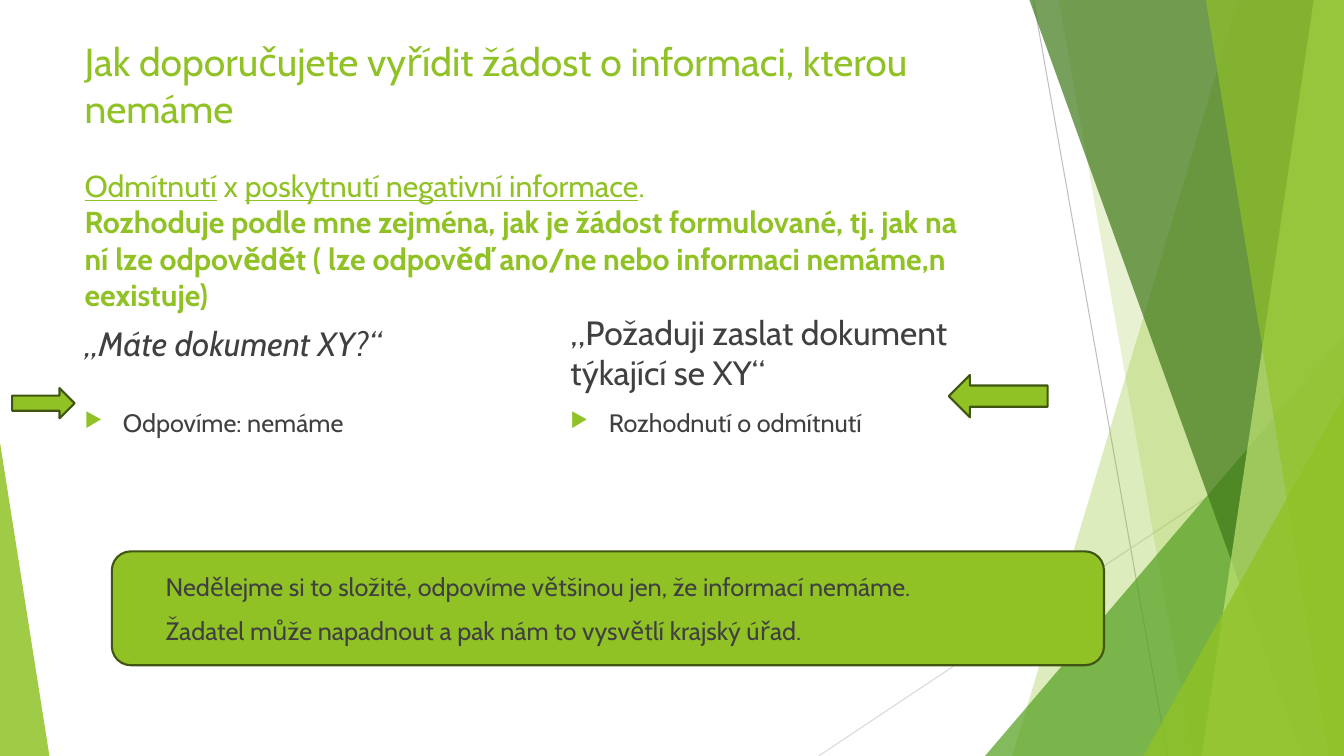
from dataclasses import dataclass
from typing import Any, Optional

import pptx
import pptx.dml.color
import pptx.enum.shapes
import pptx.enum.text
import pptx.oxml.ns
import pptx.util
from lxml import etree

Inches = pptx.util.Inches
Pt = pptx.util.Pt
MSO_SHAPE = pptx.enum.shapes.MSO_SHAPE
MSO_ANCHOR = pptx.enum.text.MSO_ANCHOR
PP_ALIGN = pptx.enum.text.PP_ALIGN
qn = pptx.oxml.ns.qn

WIDTH, HEIGHT = 13.33, 7.5
FONT = "Cabin"
GREEN, DARK_GREEN, GREY = "90C226", "3F5511", "404040"
INDENT = 0.38


@dataclass
class Ray:
    start: tuple[float, float]
    end: tuple[float, float]
    color: str


@dataclass
class Band:
    top_x: float
    bottom_x: float
    color: str
    alpha: int


@dataclass
class Wedge:
    left: float
    top: float
    width: float
    apex: float
    color: str
    alpha: int


@dataclass
class Run:
    text: str
    fmt: dict[str, Any]


@dataclass
class Para:
    runs: list[Run]
    before: float = 0
    indent: float = 0
    bullet: bool = False


@dataclass
class Box:
    left: float
    top: float
    width: float
    height: float
    paras: list[Para]
    anchor: Any = MSO_ANCHOR.TOP


@dataclass
class Panel:
    kind: Any
    left: float
    top: float
    width: float
    height: float
    paras: Optional[list[Para]] = None


def rgb(color: str) -> pptx.dml.color.RGBColor:
    return pptx.dml.color.RGBColor.from_string(color)


def paint(sp: Any, color: str, alpha: int = 100) -> None:
    sp.shadow.inherit = False
    sp.fill.solid()
    sp.fill.fore_color.rgb = rgb(color)
    if alpha < 100:
        clr = sp._element.spPr.find(qn("a:solidFill"))[0]
        etree.SubElement(clr, qn("a:alpha"), val=str(alpha * 1000))


def draw_ray(s: Any, ray: Ray) -> None:
    ends = [Inches(v) for v in ray.start + ray.end]
    c = s.shapes.add_connector(pptx.enum.shapes.MSO_CONNECTOR.STRAIGHT, *ends)
    c.line.color.rgb = rgb(ray.color)
    c.line.width = Pt(0.75)
    etree.SubElement(c._element.spPr, qn("a:effectLst"))


def draw_band(s: Any, band: Band) -> None:
    fb = s.shapes.build_freeform(Inches(band.top_x), 0)
    corners = [(WIDTH, 0), (WIDTH, HEIGHT), (band.bottom_x, HEIGHT)]
    fb.add_line_segments([(Inches(x), Inches(y)) for x, y in corners])
    sp = fb.convert_to_shape()
    paint(sp, band.color, band.alpha)
    sp.line.fill.background()


def draw_wedge(s: Any, wedge: Wedge) -> None:
    frame = (wedge.left, wedge.top, wedge.width, HEIGHT - wedge.top)
    sp = s.shapes.add_shape(MSO_SHAPE.ISOSCELES_TRIANGLE, *map(Inches, frame))
    sp.adjustments[0] = wedge.apex
    paint(sp, wedge.color, wedge.alpha)
    sp.line.fill.background()


def add_bullet(p: Any) -> None:
    pPr = p._p.get_or_add_pPr()
    color = etree.SubElement(pPr, qn("a:buClr"))
    etree.SubElement(color, qn("a:srgbClr"), val=GREEN)
    etree.SubElement(pPr, qn("a:buSzPct"), val="80000")
    etree.SubElement(pPr, qn("a:buChar"), char="▶")


def write(tf: Any, paras: list[Para], anchor: Any) -> None:
    tf.word_wrap = True
    tf.vertical_anchor = anchor
    for i, para in enumerate(paras):
        p = tf.add_paragraph() if i else tf.paragraphs[0]
        p.alignment = PP_ALIGN.LEFT
        if para.before:
            p.space_before = Pt(para.before)
        if para.indent:
            pPr = p._p.get_or_add_pPr()
            pPr.set("marL", str(Inches(para.indent)))
            pPr.set("indent", str(-Inches(para.indent) if para.bullet else 0))
        if para.bullet:
            add_bullet(p)
        for run in para.runs:
            r = p.add_run()
            r.text = run.text
            r.font.name = FONT
            for key, value in run.fmt.items():
                if key == "color":
                    r.font.color.rgb = rgb(value)
                else:
                    setattr(r.font, key, value)


def draw_box(s: Any, box: Box) -> None:
    frame = (box.left, box.top, box.width, box.height)
    sp = s.shapes.add_textbox(*map(Inches, frame))
    write(sp.text_frame, box.paras, box.anchor)


def draw_panel(s: Any, panel: Panel) -> None:
    frame = (panel.left, panel.top, panel.width, panel.height)
    sp = s.shapes.add_shape(panel.kind, *map(Inches, frame))
    paint(sp, GREEN)
    sp.line.color.rgb = rgb(DARK_GREEN)
    sp.line.width = Pt(1.5)
    if panel.paras:
        write(sp.text_frame, panel.paras, MSO_ANCHOR.MIDDLE)


HEADLINE = {"size": Pt(27.9), "color": GREEN}
LEAD = {"size": Pt(21.6), "color": GREEN}
UNDERLINED = {**LEAD, "underline": True}
STRONG = {**LEAD, "bold": True}
QUOTE = {"size": Pt(24), "color": GREY}
BODY = {"size": Pt(18), "color": GREY}

RAYS = [
    Ray((10.25, 0), (11.58, HEIGHT), "BFBFBF"),
    Ray((WIDTH, 4.03), (8.12, HEIGHT), "D9D9D9"),
]
FACETS = [
    Band(12.28, 10.04, GREEN, 30),
    Band(10.5, 11.83, GREEN, 20),
    Wedge(9.77, 3.33, 3.56, 1, "54A021", 72),
    Band(10.21, 12.91, "3F7819", 70),
    Band(13.03, 11.92, "C0E474", 70),
    Band(11.96, 13.18, GREEN, 65),
    Wedge(11.34, 3.93, 1.99, 1, GREEN, 80),
    Wedge(0, 4.39, 0.49, 0, GREEN, 85),
]
TITLE = [
    Para([Run("Jak doporučujete vyřídit žádost o informaci, kterou nemáme", HEADLINE)]),
    Para([Run("Odmítnutí", UNDERLINED), Run(" x ", LEAD),
          Run("poskytnutí negativní informace", UNDERLINED), Run(".", LEAD)], before=26),
    Para([Run("Rozhoduje podle mne zejména, jak je žádost formulované, tj. jak na ní lze "
              "odpovědět ( lze odpověď ano/ne nebo informaci nemáme,n eexistuje)", STRONG)]),
]
BOXES = [
    Box(0.74, 0.32, 9.12, 1.79, TITLE),
    Box(0.74, 2.36, 4.58, 1.29,
        [Para([Run("„Máte dokument XY?“", {**QUOTE, "italic": True})])], MSO_ANCHOR.BOTTOM),
    Box(5.56, 2.55, 4.58, 1.39,
        [Para([Run("„Požaduji zaslat dokument týkající se XY“", QUOTE)])], MSO_ANCHOR.BOTTOM),
] + [
    Box(left, 3.99, 4.58, 2.62, [Para([Run(answer, BODY)], indent=INDENT, bullet=True)])
    for left, answer in [(0.74, "Odpovíme: nemáme"), (5.56, "Rozhodnutí o odmítnutí")]
]
ADVICE = [
    Para([Run("Nedělejme si to složité, odpovíme většinou jen, že informací nemáme.", BODY)],
         indent=INDENT),
    Para([Run("Žadatel může napadnout a pak nám to vysvětlí krajský úřad.", BODY)],
         before=10, indent=INDENT),
]
PANELS = [
    Panel(MSO_SHAPE.ROUNDED_RECTANGLE, 1.11, 5.47, 9.84, 1.13, ADVICE),
    Panel(MSO_SHAPE.RIGHT_ARROW, 0.12, 3.85, 0.62, 0.3),
    Panel(MSO_SHAPE.LEFT_ARROW, 9.41, 3.72, 0.98, 0.42),
]


def main() -> None:
    prs = pptx.Presentation()
    prs.slide_width, prs.slide_height = Inches(WIDTH), Inches(HEIGHT)
    s = prs.slides.add_slide(prs.slide_layouts[6])
    draw = {Ray: draw_ray, Band: draw_band, Wedge: draw_wedge, Box: draw_box, Panel: draw_panel}
    for item in RAYS + FACETS + BOXES + PANELS:
        draw[type(item)](s, item)
    prs.save("out.pptx")


if __name__ == "__main__":
    main()
